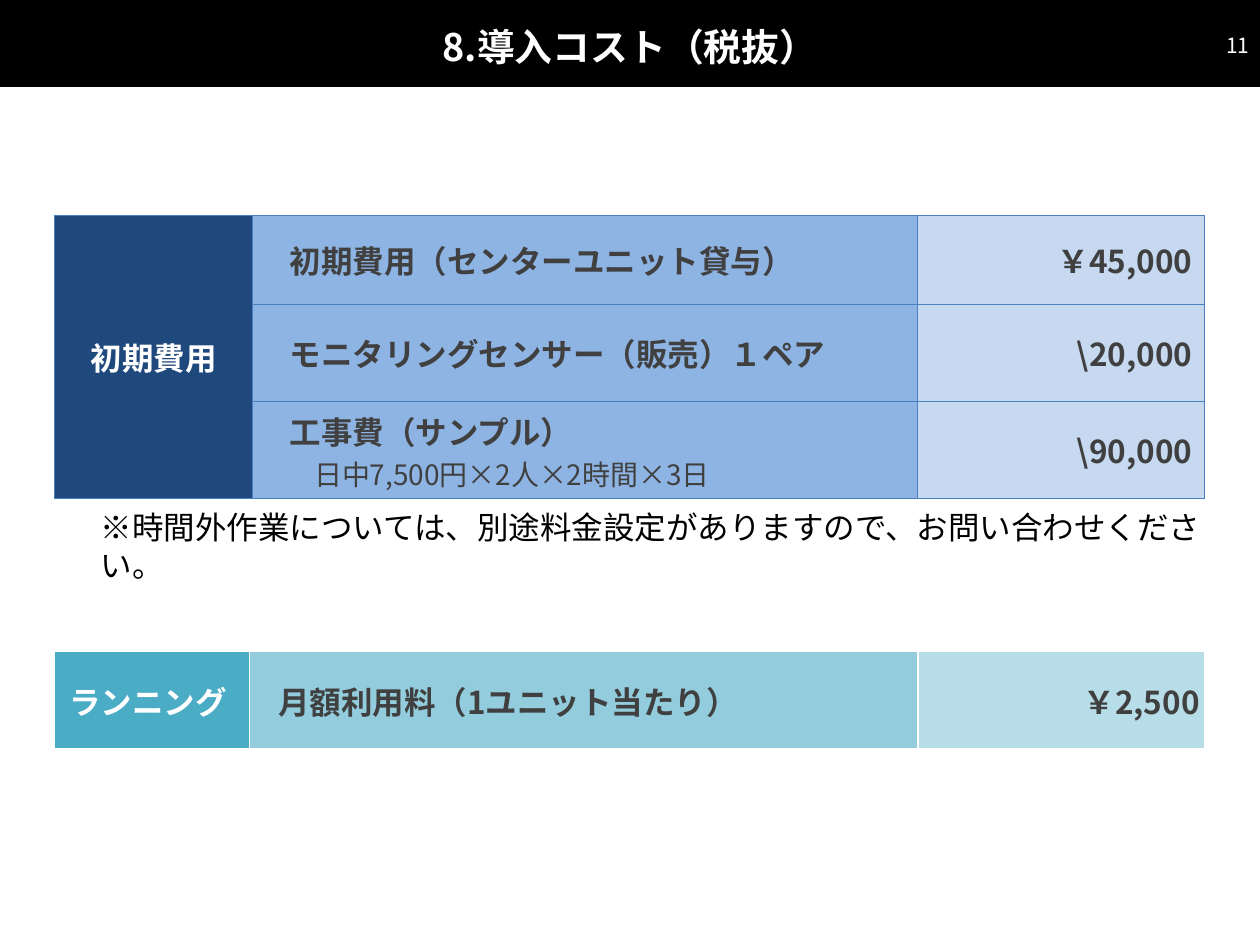
import pptx
import pptx.dml.color
import pptx.enum.shapes
import pptx.enum.text
import pptx.oxml.ns
import pptx.util
from dataclasses import dataclass
from lxml import etree

Pt = pptx.util.Pt
qn = pptx.oxml.ns.qn
ALIGN = pptx.enum.text.PP_ALIGN
MIDDLE = pptx.enum.text.MSO_ANCHOR.MIDDLE


@dataclass(frozen=True)
class Theme:
    font: str = "Noto Sans CJK JP"
    black: str = "000000"
    white: str = "FFFFFF"
    body: str = "404040"
    initial: tuple = ("1F497D", "8EB4E3", "C6D9F1")
    running: tuple = ("4BACC6", "93CDDD", "B7DEE8")
    initial_border: str = "4B7EBC"
    title_size: float = 21.6
    text_size: float = 18
    detail_size: float = 16
    number_size: float = 12


THEME = Theme()


def rgb(color):
    return pptx.dml.color.RGBColor.from_string(color)


def format_paragraph(p, size, color, bold=False, align=ALIGN.LEFT, indent=0):
    p.alignment = align
    if indent:
        pPr = p._p.get_or_add_pPr()
        pPr.set("marL", str(Pt(indent)))
        pPr.set("indent", "0")
    for r in p.runs:
        r.font.size = Pt(size)
        r.font.bold = bold
        r.font.color.rgb = rgb(color)
        r.font.name = THEME.font
        ea = etree.SubElement(r._r.get_or_add_rPr(), qn("a:ea"))
        ea.set("typeface", THEME.font)


def add_bar(slide, left, top, width, height, color):
    sp = slide.shapes.add_shape(pptx.enum.shapes.MSO_SHAPE.RECTANGLE,
                                Pt(left), Pt(top), Pt(width), Pt(height))
    sp.shadow.inherit = False
    sp.fill.solid()
    sp.fill.fore_color.rgb = rgb(color)
    sp.line.fill.background()


def add_text(slide, text, left, top, width, height, size, color,
             bold=False, align=ALIGN.LEFT, anchor=MIDDLE):
    tf = slide.shapes.add_textbox(Pt(left), Pt(top), Pt(width), Pt(height)).text_frame
    tf.word_wrap = True
    tf.vertical_anchor = anchor
    tf.text = text
    format_paragraph(tf.paragraphs[0], size, color, bold, align)


def add_table(slide, left, top, widths, heights, fills, borders):
    """Add an empty table with one fill per column; borders maps side to (color, width)."""
    table = slide.shapes.add_table(len(heights), len(widths), Pt(left), Pt(top),
                                   Pt(sum(widths)), Pt(sum(heights))).table
    table.first_row = table.horz_banding = False
    for column, width in zip(table.columns, widths):
        column.width = Pt(width)
    for row, height in zip(table.rows, heights):
        row.height = Pt(height)
        for cell, fill in zip(row.cells, fills):
            tcPr = cell._tc.get_or_add_tcPr()
            for side, (color, width) in borders.items():
                ln = etree.SubElement(tcPr, qn("a:ln" + side), w=str(Pt(width)))
                line_fill = etree.SubElement(ln, qn("a:solidFill"))
                etree.SubElement(line_fill, qn("a:srgbClr"), val=color)
            cell.fill.solid()
            cell.fill.fore_color.rgb = rgb(fill)
    return table


def fill_cell(cell, text, color, align=ALIGN.LEFT, indent=0,
              margins=(3, 3), detail=None):
    cell.vertical_anchor = MIDDLE
    cell.margin_left, cell.margin_right = (Pt(m) for m in margins)
    tf = cell.text_frame
    tf.text = text
    format_paragraph(tf.paragraphs[0], THEME.text_size, color, True, align, indent)
    if detail:
        p = tf.add_paragraph()
        p.text = detail
        format_paragraph(p, THEME.detail_size, color, indent=2 * THEME.detail_size)


def add_initial_costs(slide):
    items = [
        ("初期費用（センターユニット貸与）", None, "￥45,000"),
        ("モニタリングセンサー（販売）１ペア", None, "\\20,000"),
        ("工事費（サンプル）", "日中7,500円×2人×2時間×3日", "\\90,000"),
    ]
    borders = {side: (THEME.initial_border, 0.75) for side in "LRTB"}
    table = add_table(slide, 31, 123, (113.5, 380, 164), (51, 55.5, 55.5),
                      THEME.initial, borders)
    table.cell(0, 0).merge(table.cell(len(items) - 1, 0))
    fill_cell(table.cell(0, 0), "初期費用", THEME.white, ALIGN.CENTER)
    for i, (name, detail, price) in enumerate(items):
        fill_cell(table.cell(i, 1), name, THEME.body,
                  indent=THEME.text_size, detail=detail)
        fill_cell(table.cell(i, 2), price, THEME.body, ALIGN.RIGHT, margins=(7.2, 7.2))


def add_running_cost(slide):
    borders = {side: (THEME.white, 1) for side in "LRT"}
    borders["B"] = (THEME.white, 3)
    table = add_table(slide, 31, 372, (111.5, 382, 164), (57,), THEME.running, borders)
    fill_cell(table.cell(0, 0), "ランニング", THEME.white, ALIGN.CENTER, margins=(3, 7.2))
    fill_cell(table.cell(0, 1), "月額利用料（1ユニット当たり）", THEME.body,
              indent=13.5, margins=(3, 7.2))
    fill_cell(table.cell(0, 2), "￥2,500", THEME.body, ALIGN.RIGHT)


def main():
    prs = pptx.Presentation()
    prs.slide_width, prs.slide_height = Pt(720), Pt(540)
    slide = prs.slides.add_slide(prs.slide_layouts[6])

    # Header
    add_bar(slide, 0, 0, 720, 49.7, THEME.black)
    add_text(slide, "8.導入コスト（税抜）", 36, 9.5, 648, 34,
             THEME.title_size, THEME.white, True, ALIGN.CENTER)
    add_text(slide, "11", 684, 11.5, 37, 29,
             THEME.number_size, THEME.white, align=ALIGN.RIGHT)

    # Cost tables and the note between them
    add_initial_costs(slide)
    add_text(slide, "※時間外作業については、別途料金設定がありますので、お問い合わせください。",
             50.5, 287, 657.5, 29, THEME.text_size, THEME.black,
             anchor=pptx.enum.text.MSO_ANCHOR.TOP)
    add_running_cost(slide)

    prs.save("out.pptx")


if __name__ == "__main__":
    main()
